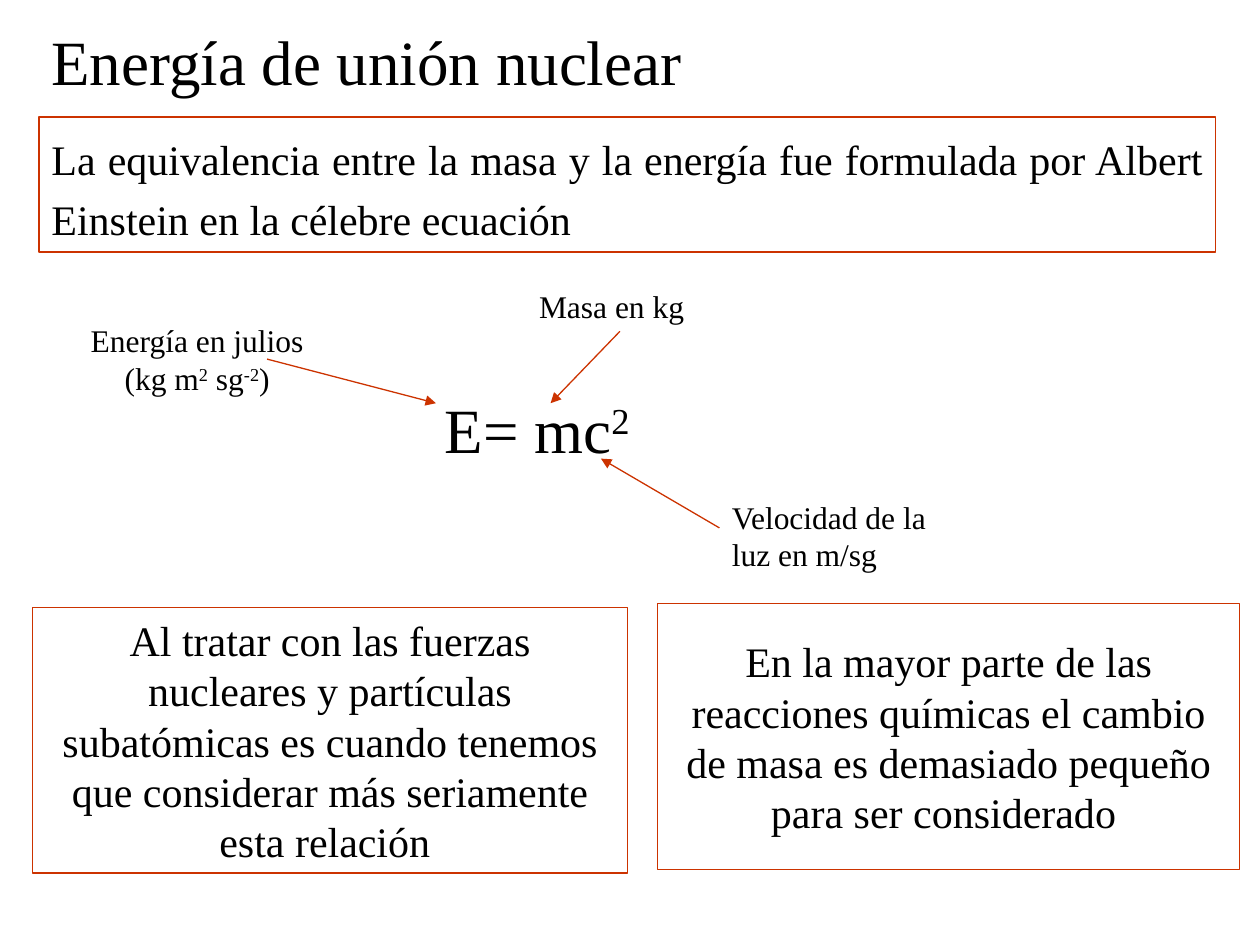
from dataclasses import dataclass

from lxml import etree
from pptx import Presentation
from pptx.dml.color import RGBColor
from pptx.enum.shapes import MSO_CONNECTOR, MSO_SHAPE
from pptx.enum.text import MSO_ANCHOR, MSO_AUTO_SIZE, PP_ALIGN
from pptx.oxml.ns import qn
from pptx.util import Inches, Pt


@dataclass(frozen=True)
class Theme:
    font: str = "Times New Roman"
    ink: RGBColor = RGBColor(0x00, 0x00, 0x00)
    accent: RGBColor = RGBColor(0xCC, 0x33, 0x00)
    display: int = 36
    body: int = 24
    label: int = 18
    rule: float = 0.75


def write_text(frame, text, *, theme, size, align=PP_ALIGN.LEFT,
               anchor=MSO_ANCHOR.TOP, wrap=True, spacing=None):
    frame.word_wrap = wrap
    frame.auto_size = MSO_AUTO_SIZE.SHAPE_TO_FIT_TEXT
    frame.vertical_anchor = anchor
    paragraph = frame.paragraphs[0]
    paragraph.alignment = align
    if spacing:
        paragraph.line_spacing = spacing
    for index, part in enumerate(text.split("^")):
        if not part:
            continue
        run = paragraph.add_run()
        run.text = part
        run.font.name = theme.font
        run.font.size = Pt(size)
        run.font.color.rgb = theme.ink
        if index % 2:
            run._r.get_or_add_rPr().set("baseline", "30000")


class SlideBuilder:
    def __init__(self, slide, theme):
        self.slide = slide
        self.theme = theme

    def label(self, text, box, size, **style):
        caption = self.slide.shapes.add_textbox(*map(Inches, box))
        write_text(caption.text_frame, text, theme=self.theme, size=size, **style)

    def framed(self, text, box, **style):
        panel = self.slide.shapes.add_shape(MSO_SHAPE.RECTANGLE, *map(Inches, box))
        panel.shadow.inherit = False
        panel.fill.background()
        panel.line.color.rgb = self.theme.accent
        panel.line.width = Pt(self.theme.rule)
        write_text(panel.text_frame, text, theme=self.theme,
                   size=self.theme.body, **style)

    def arrow(self, start, end):
        pointer = self.slide.shapes.add_connector(
            MSO_CONNECTOR.STRAIGHT, *map(Inches, start + end))
        pointer.line.color.rgb = self.theme.accent
        pointer.line.width = Pt(self.theme.rule)
        etree.SubElement(pointer.line._get_or_add_ln(), qn("a:tailEnd"), type="triangle")
        etree.SubElement(pointer._element.spPr, qn("a:effectLst"))


def main():
    presentation = Presentation()
    presentation.slide_width = Inches(10)
    presentation.slide_height = Inches(7.5)
    theme = Theme()
    builder = SlideBuilder(
        presentation.slides.add_slide(presentation.slide_layouts[6]), theme)

    builder.label("Energía de unión nuclear", (0.31, 0.12, 5.26, 0.71), theme.display,
                  align=PP_ALIGN.JUSTIFY, anchor=MSO_ANCHOR.MIDDLE, wrap=False)
    builder.label("E= mc^2^", (3.43, 3.05, 1.81, 0.71), theme.display)
    builder.label("Energía en julios (kg m^2^ sg^-2^)", (0.5, 2.5, 2.13, 0.7),
                  theme.label, align=PP_ALIGN.CENTER)
    builder.label("Masa en kg", (4.18, 2.23, 1.5, 0.4), theme.label)
    builder.label("Velocidad de la luz en m/sg", (5.71, 3.9, 1.89, 0.7), theme.label)

    builder.framed(
        "La equivalencia entre la masa y la energía fue formulada por Albert "
        "Einstein en la célebre ecuación",
        (0.31, 0.93, 9.34, 1.07), align=PP_ALIGN.JUSTIFY, spacing=1.2)

    for start, end in (
        ((4.92, 2.63), (4.37, 3.2)),
        ((5.71, 4.19), (4.77, 3.64)),
        ((2.12, 2.85), (3.46, 3.2)),
    ):
        builder.arrow(start, end)

    for conclusion, box in (
        ("Al tratar con las fuerzas nucleares y partículas subatómicas es cuando "
         "tenemos que considerar más seriamente esta relación ",
         (0.26, 4.82, 4.72, 2.11)),
        ("En la mayor parte de las reacciones químicas el cambio de masa es "
         "demasiado pequeño para ser considerado ",
         (5.22, 4.79, 4.62, 2.11)),
    ):
        builder.framed(conclusion, box, align=PP_ALIGN.CENTER, anchor=MSO_ANCHOR.MIDDLE)

    presentation.save("out.pptx")


if __name__ == "__main__":
    main()
